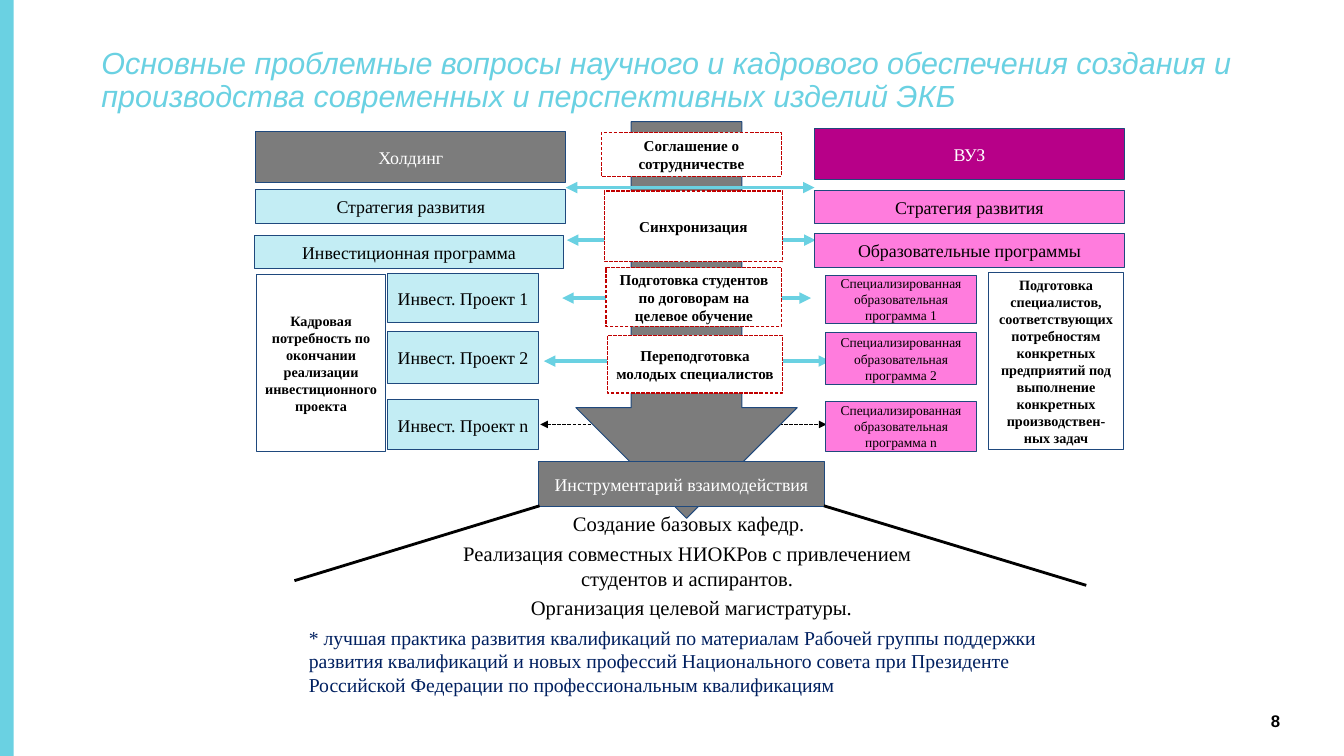
from dataclasses import dataclass

from lxml import etree
from pptx import Presentation
from pptx.dml.color import RGBColor
from pptx.enum import dml, shapes, text
from pptx.oxml import ns
from pptx.util import Cm, Pt


@dataclass(frozen=True)
class Theme:
    cyan: str = "6AD1E2"
    pale: str = "C3EDF4"
    pink: str = "FF7CDD"
    magenta: str = "B70088"
    gray: str = "7C7C7C"
    navy: str = "1F497D"
    note: str = "002060"
    red: str = "C00000"
    black: str = "000000"
    white: str = "FFFFFF"
    sans: str = "Arial"
    serif: str = "Times New Roman"
    title_size: float = 24
    number_size: float = 13.2
    box_size: float = 14.1
    program_size: float = 10.6
    need_size: float = 11.2
    step_size: float = 11.9
    result_size: float = 16.2
    note_size: float = 15.5


T = Theme()
MIDDLE, TOP = text.MSO_ANCHOR.MIDDLE, text.MSO_ANCHOR.TOP
LEFT, CENTER, RIGHT = text.PP_ALIGN.LEFT, text.PP_ALIGN.CENTER, text.PP_ALIGN.RIGHT
DASH = dml.MSO_LINE.SQUARE_DOT

prs = Presentation()
prs.slide_width, prs.slide_height = Cm(37.34), Cm(21)
s = prs.slides.add_slide(prs.slide_layouts[6])


def add_box(at, words="", size=T.box_size, color=T.black, fill=None, line=None,
            kind=shapes.MSO_SHAPE.RECTANGLE, font=T.serif, bold=False,
            align=CENTER, anchor=MIDDLE, inset=(0.2, 0.2)):
    at = [Cm(v) for v in at]
    if fill:
        sp = s.shapes.add_shape(kind, *at)
        sp.shadow.inherit = False
        sp.fill.solid()
        sp.fill.fore_color.rgb = RGBColor.from_string(fill)
        if line:
            sp.line.color.rgb = RGBColor.from_string(line)
            sp.line.width = Pt(0.75)
        else:
            sp.line.fill.background()
    else:
        sp = s.shapes.add_textbox(*at)
    if words:
        tf = sp.text_frame
        tf.word_wrap = True
        tf.vertical_anchor = anchor
        tf.margin_left = tf.margin_right = Cm(inset[0])
        tf.margin_top = tf.margin_bottom = Cm(inset[1])
        tf.text = words
        p = tf.paragraphs[0]
        p.alignment = align
        f = p.runs[0].font
        f.name, f.size, f.bold = font, Pt(size), bold
        f.color.rgb = RGBColor.from_string(color)
    return sp


def add_line(x1, y1, x2, y2, color, width, arrows=False):
    ln = s.shapes.add_connector(shapes.MSO_CONNECTOR.STRAIGHT,
                                Cm(x1), Cm(y1), Cm(x2), Cm(y2))
    ln.line.color.rgb = RGBColor.from_string(color)
    ln.line.width = Pt(width)
    if arrows:
        for end in ("a:headEnd", "a:tailEnd"):
            etree.SubElement(ln.line._get_or_add_ln(), ns.qn(end), type="triangle")
    etree.SubElement(ln._element.spPr, ns.qn("a:effectLst"))
    return ln


# Side bar, title and page number
add_box((0, 0, 0.38, 21), fill=T.cyan)
title = add_box((2.57, 1.12, 33.25, 2.29),
                "Основные проблемные вопросы научного и кадрового обеспечения создания и "
                "производства современных и перспективных изделий ЭКБ",
                T.title_size, T.cyan, font=T.sans, align=LEFT, inset=(0.25, 0.13))
p = title.text_frame.paragraphs[0]
p.line_spacing = 0.9
p.runs[0].font.italic = True
add_box((29.57, 19.46, 6.25, 1.12), "8", T.number_size, font=T.sans, bold=True,
        align=RIGHT, inset=(0.25, 0.13))

# Links behind the large arrow, the arrow, links in front of it
add_line(15.01, 11.79, 22.96, 11.79, T.black, 1, True).line.dash_style = DASH
add_line(15.11, 10.03, 23.06, 10.03, T.cyan, 3, True)
add_box((16, 3.38, 6.15, 11.02), fill=T.gray, line=T.navy,
        kind=shapes.MSO_SHAPE.DOWN_ARROW)
for x, y in ((15.72, 5.21), (15.75, 6.67), (15.62, 8.28)):
    add_line(x, y, x + 6.91, y, T.cyan, 3, True)

# Holding and university: header, strategy, programmes
for x, y, h, words, fill, color in (
        (7.11, 3.66, 1.4, "Холдинг", T.gray, T.white),
        (7.11, 5.26, 0.94, "Стратегия развития", T.pale, T.black),
        (7.06, 6.53, 0.94, "Инвестиционная программа", T.pale, T.black),
        (22.63, 3.58, 1.4, "ВУЗ", T.magenta, T.white),
        (22.63, 5.28, 0.94, "Стратегия развития", T.pink, T.black),
        (22.63, 6.48, 0.94, "Образовательные программы", T.pink, T.black)):
    add_box((x, y, 8.61, h), words, color=color, fill=fill, line=T.navy)

# Projects and the matching study programmes
for n, y, h in (("1", 7.6, 1.35), ("2", 9.2, 1.45), ("n", 11.11, 1.39)):
    add_box((10.77, y, 4.19, h), f"Инвест. Проект {n}", fill=T.pale, line=T.navy)
    add_box((22.94, y + 0.04, 4.19, h), f"Специализированная образовательная программа {n}",
            T.program_size, fill=T.pink, line=T.navy)

# Staffing needs on the outer sides
for x, y, w, words in (
        (7.14, 7.62, 3.56, "Кадровая потребность по окончании реализации "
                           "инвестиционного проекта"),
        (27.46, 7.57, 3.76, "Подготовка специалистов, соответствующих потребностям "
                            "конкретных предприятий под выполнение конкретных "
                            "производствен-ных задач")):
    add_box((x, y, w, 4.93), words, T.need_size, fill=T.white, line=T.navy, bold=True)

# Steps of cooperation on the arrow
for x, y, w, h, words in (
        (16.71, 3.68, 5, 1.22, "Соглашение о сотрудничестве"),
        (16.79, 5.31, 4.95, 1.96, "Синхронизация"),
        (16.84, 7.44, 4.88, 1.63, "Подготовка студентов по договорам на целевое обучение"),
        (16.87, 9.32, 4.88, 1.6, "Переподготовка молодых специалистов")):
    sp = add_box((x, y, w, h), words, T.step_size, fill=T.white, line=T.red,
                 bold=True, inset=(0.25, 0.13))
    sp.line.width = Pt(1)
    sp.line.dash_style = DASH

# Tools of interaction with the spreading lines
add_box((14.96, 12.83, 7.95, 1.24), "Инструментарий взаимодействия",
        color=T.white, fill=T.gray, line=T.navy)
add_line(14.99, 14.05, 8.18, 16.13, T.black, 2.25)
add_line(22.89, 14.05, 30.18, 16.26, T.black, 2.25)

# Results and footnote
for at, words, size, color, align in (
        ((15.67, 14.07, 7.11, 0.94), "Создание базовых кафедр.",
         T.result_size, T.black, LEFT),
        ((11.51, 14.91, 15.16, 1.63), "Реализация совместных НИОКРов с привлечением "
         "студентов и аспирантов.", T.result_size, T.black, CENTER),
        ((14.5, 16.41, 9.45, 0.94), "Организация целевой магистратуры.",
         T.result_size, T.black, LEFT),
        ((8.33, 17.25, 21.95, 2.24), "* лучшая практика развития квалификаций по "
         "материалам Рабочей группы поддержки развития квалификаций и новых профессий "
         "Национального совета при Президенте Российской Федерации по профессиональным "
         "квалификациям", T.note_size, T.note, LEFT)):
    add_box(at, words, size, color, align=align, anchor=TOP, inset=(0.25, 0.13))

prs.save("out.pptx")
